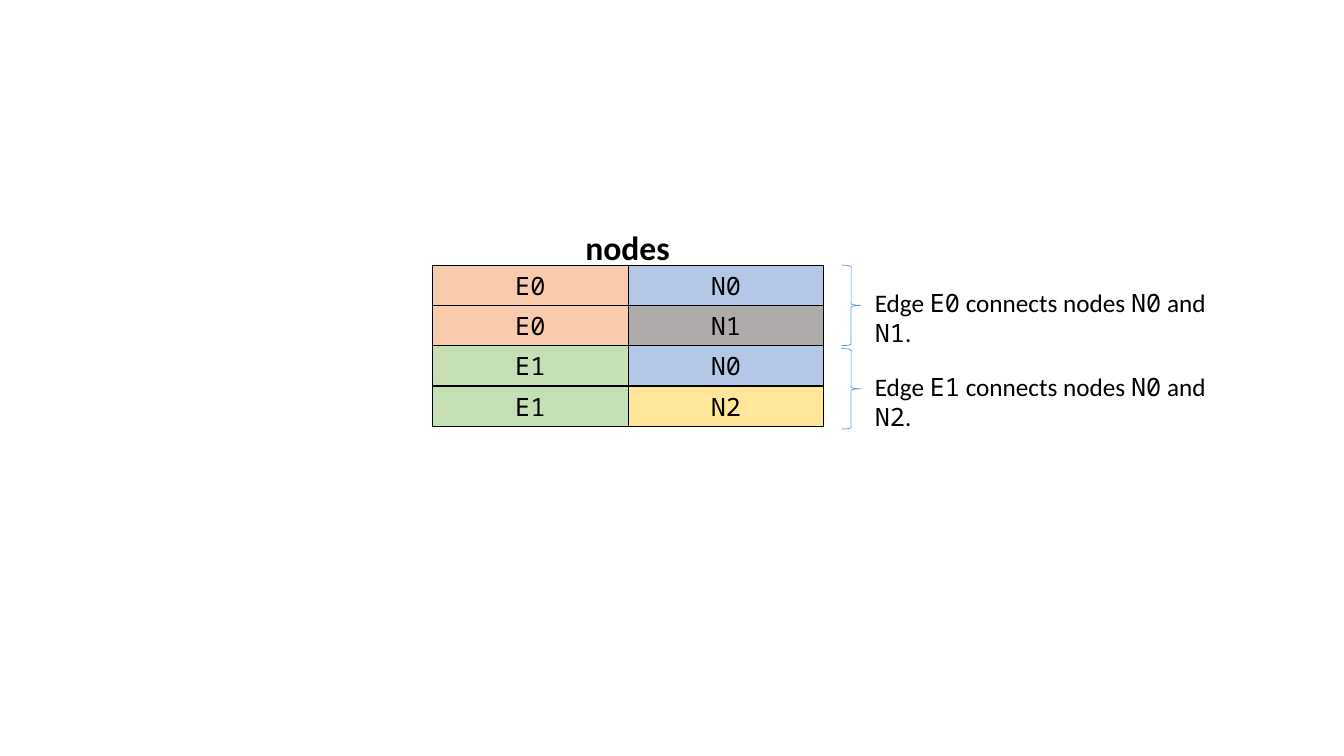
from pptx import Presentation
from pptx.dml.color import RGBColor
from pptx.enum.shapes import MSO_SHAPE as Preset
from pptx.enum.text import MSO_ANCHOR as Anchor, PP_ALIGN as Align
from pptx.util import Inches, Pt

EDGE_COLORS = {"E0": "F8CBAD", "E1": "C5E0B4"}
NODE_COLORS = {"N0": "B4C7E7", "N1": "AFABAB", "N2": "FFE699"}
CONNECTIONS = {"E0": ("N0", "N1"), "E1": ("N0", "N2")}
GROUP_PITCH = 2.07  # rows from one brace to the next


def color(hex_string):
    return RGBColor.from_string(hex_string)


class NodeTable:
    """Places elements on a grid whose origin is the table's top left corner."""

    left, top = 4.29, 2.63
    column_width, row_height = 1.94, 0.4
    text_font, code_font = "Calibri", "Noto Sans Mono"
    ink, accent = "000000", "5B9BD5"

    def __init__(self, slide):
        self.slide = slide

    def box(self, column, row, columns, rows):
        """Turn grid units into left, top, width and height."""
        return (Inches(self.left + column * self.column_width),
                Inches(self.top + row * self.row_height),
                Inches(columns * self.column_width),
                Inches(rows * self.row_height))

    def style(self, font, size, name=None, bold=False):
        font.size, font.name, font.bold = Pt(size), name, bold
        font.color.rgb = color(self.ink)

    def shape(self, preset, box, line_color, line_width):
        shape = self.slide.shapes.add_shape(preset, *box)
        shape.shadow.inherit = False
        shape.line.color.rgb = color(line_color)
        shape.line.width = Pt(line_width)
        return shape

    def cell(self, column, row, text, fill):
        box = self.box(column, row, 1, 1)
        shape = self.shape(Preset.RECTANGLE, box, self.ink, 0.75)
        shape.fill.solid()
        shape.fill.fore_color.rgb = color(fill)
        shape.text_frame.vertical_anchor = Anchor.MIDDLE
        paragraph = shape.text_frame.paragraphs[0]
        paragraph.text, paragraph.alignment = text, Align.CENTER
        self.style(paragraph.font, 18, self.code_font)

    def brace(self, row):
        box = self.box(2.09, row, 0.1, 2)
        self.shape(Preset.RIGHT_BRACE, box, self.accent, 0.5).fill.background()

    def text_box(self, box, wrap):
        frame = self.slide.shapes.add_textbox(*box).text_frame
        frame.word_wrap = wrap
        return frame.paragraphs[0]

    def heading(self, text):
        paragraph = self.text_box(self.box(0.73, -1.07, 0.54, 1.25), False)
        paragraph.text = text
        self.style(paragraph.font, 24, self.text_font, bold=True)

    def sentence(self, row, edge, first_node, second_node):
        paragraph = self.text_box(self.box(2.21, row, 1.98, 1), True)
        self.style(paragraph.font, 18)
        parts = ("Edge ", edge, " connects nodes ", first_node,
                 " and ", second_node, ".")
        for index, part in enumerate(parts):
            run = paragraph.add_run()
            run.text = part
            name = self.code_font if index % 2 else self.text_font
            self.style(run.font, 18, name)


def main():
    presentation = Presentation()
    presentation.slide_width = Inches(13.33)
    presentation.slide_height = Inches(7.5)
    blank_layout = presentation.slide_layouts[6]
    table = NodeTable(presentation.slides.add_slide(blank_layout))

    table.heading("nodes")
    for group, (edge, nodes) in enumerate(CONNECTIONS.items()):
        for row, node in enumerate(nodes, start=2 * group):
            table.cell(0, row, edge, EDGE_COLORS[edge])
            table.cell(1, row, node, NODE_COLORS[node])
        brace_row = group * GROUP_PITCH
        table.brace(brace_row)
        table.sentence(brace_row + 0.43, edge, *nodes)

    presentation.save("out.pptx")


if __name__ == "__main__":
    main()
